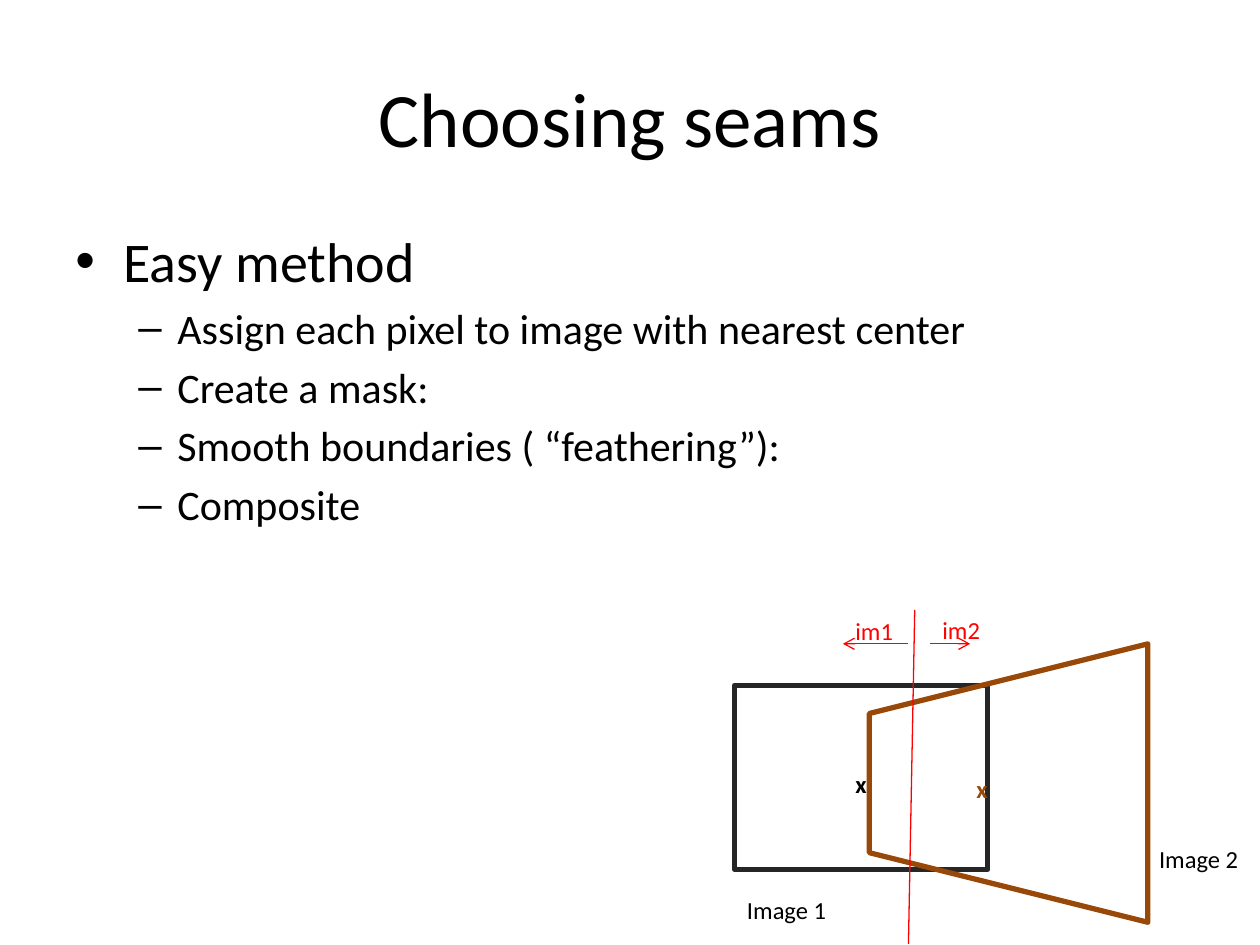
from lxml import etree
from pptx import Presentation
from pptx.dml.color import RGBColor
from pptx.enum.shapes import MSO_CONNECTOR, MSO_SHAPE
from pptx.enum.text import MSO_ANCHOR, PP_ALIGN
from pptx.oxml.ns import qn
from pptx.util import Inches, Pt

STRAIGHT = MSO_CONNECTOR.STRAIGHT
RECTANGLE, TRAPEZOID = MSO_SHAPE.RECTANGLE, MSO_SHAPE.TRAPEZOID
TOP, MIDDLE = MSO_ANCHOR.TOP, MSO_ANCHOR.MIDDLE
LEFT, CENTER = PP_ALIGN.LEFT, PP_ALIGN.CENTER

BLACK = RGBColor(0x00, 0x00, 0x00)
CHARCOAL = RGBColor(0x26, 0x26, 0x26)
BROWN = RGBColor(0x98, 0x48, 0x07)
RED = RGBColor(0xFF, 0x00, 0x00)
FONT = "Calibri"

TITLE = "Choosing seams"
TITLE_AREA = (5, 4, 90, 16.67)
BODY_AREA = (5, 23.33, 90, 66)
POINTS = [
    (0, "Easy method"),
    (1, "Assign each pixel to image with nearest center"),
    (1, "Create a mask:"),
    (1, "Smooth boundaries ( “feathering”):"),
    (1, "Composite"),
]
LEVELS = [
    {"size": 32, "bullet": "•", "indent": 0.38, "hang": 0.38},
    {"size": 24, "bullet": "–", "indent": 0.81, "hang": 0.31},
]
FRAMES = [
    (RECTANGLE, (58.3, 72.53, 20.1, 19.47), CHARCOAL, 0),
    (TRAPEZOID, (69, 68.13, 22.1, 29.47), BROWN, 270),
]
LABEL_HEIGHT = 4.53
LABELS = [
    ("Image 1", 58.3, 94, 9.1, BLACK, False),
    ("Image 2", 91, 88.67, 9.1, BLACK, False),
    ("x", 66.9, 80.67, 3.1, BLACK, True),
    ("x", 76.5, 81.2, 3.1, BROWN, True),
    ("im1", 66.9, 64.53, 5.2, RED, False),
    ("im2", 73.8, 64.4, 5.2, RED, False),
]
SEAM_LINES = [
    ((72.6, 64.53), (72.1, 99.87), False),
    ((72.1, 68.13), (66.9, 68.13), True),
    ((73.8, 68.13), (77, 68.13), True),
]

deck = Presentation()
deck.slide_width, deck.slide_height = Inches(10), Inches(7.5)
slide = deck.slides.add_slide(deck.slide_layouts[6])


def place(*shares):
    sides = (deck.slide_width, deck.slide_height)
    return [round(share / 100 * sides[i % 2]) for i, share in enumerate(shares)]


def add_text(area, paragraphs, size=14, color=BLACK, bold=False, align=LEFT,
             anchor=TOP, wrap=True):
    frame = slide.shapes.add_textbox(*place(*area)).text_frame
    frame.word_wrap, frame.vertical_anchor = wrap, anchor
    for number, (text, level) in enumerate(paragraphs):
        paragraph = frame.paragraphs[0] if number == 0 else frame.add_paragraph()
        paragraph.alignment = align
        run = paragraph.add_run()
        run.text = text
        run.font.name, run.font.bold = FONT, bold
        run.font.size = Pt(level["size"] if level else size)
        run.font.color.rgb = color
        if level:
            paragraph.space_before = Pt(level["size"] * 0.2)
            add_bullet(paragraph, level)


def add_bullet(paragraph, level):
    properties = paragraph._p.get_or_add_pPr()
    properties.set("marL", str(Inches(level["indent"])))
    properties.set("indent", str(-Inches(level["hang"])))
    etree.SubElement(properties, qn("a:buFont"), typeface="Arial")
    etree.SubElement(properties, qn("a:buChar"), char=level["bullet"])


def add_frame(kind, area, color, rotation):
    frame = slide.shapes.add_shape(kind, *place(*area))
    frame.shadow.inherit = False
    frame.fill.background()
    frame.line.color.rgb, frame.line.width = color, Pt(3)
    frame.rotation = rotation


def add_seam_line(start, end, arrow):
    seam = slide.shapes.add_connector(STRAIGHT, *place(*start, *end))
    seam.line.color.rgb, seam.line.width = RED, Pt(0.75)
    if arrow:
        etree.SubElement(seam.line._get_or_add_ln(), qn("a:tailEnd"), type="arrow")
    etree.SubElement(seam._element.spPr, qn("a:effectLst"))


add_text(TITLE_AREA, [(TITLE, None)], size=44, align=CENTER, anchor=MIDDLE)
add_text(BODY_AREA, [(text, LEVELS[depth]) for depth, text in POINTS])
for image_frame in FRAMES:
    add_frame(*image_frame)
for seam_line in SEAM_LINES:
    add_seam_line(*seam_line)
for text, x, y, width, color, bold in LABELS:
    add_text((x, y, width, LABEL_HEIGHT), [(text, None)], color=color, bold=bold,
             wrap=False)

deck.save("out.pptx")
